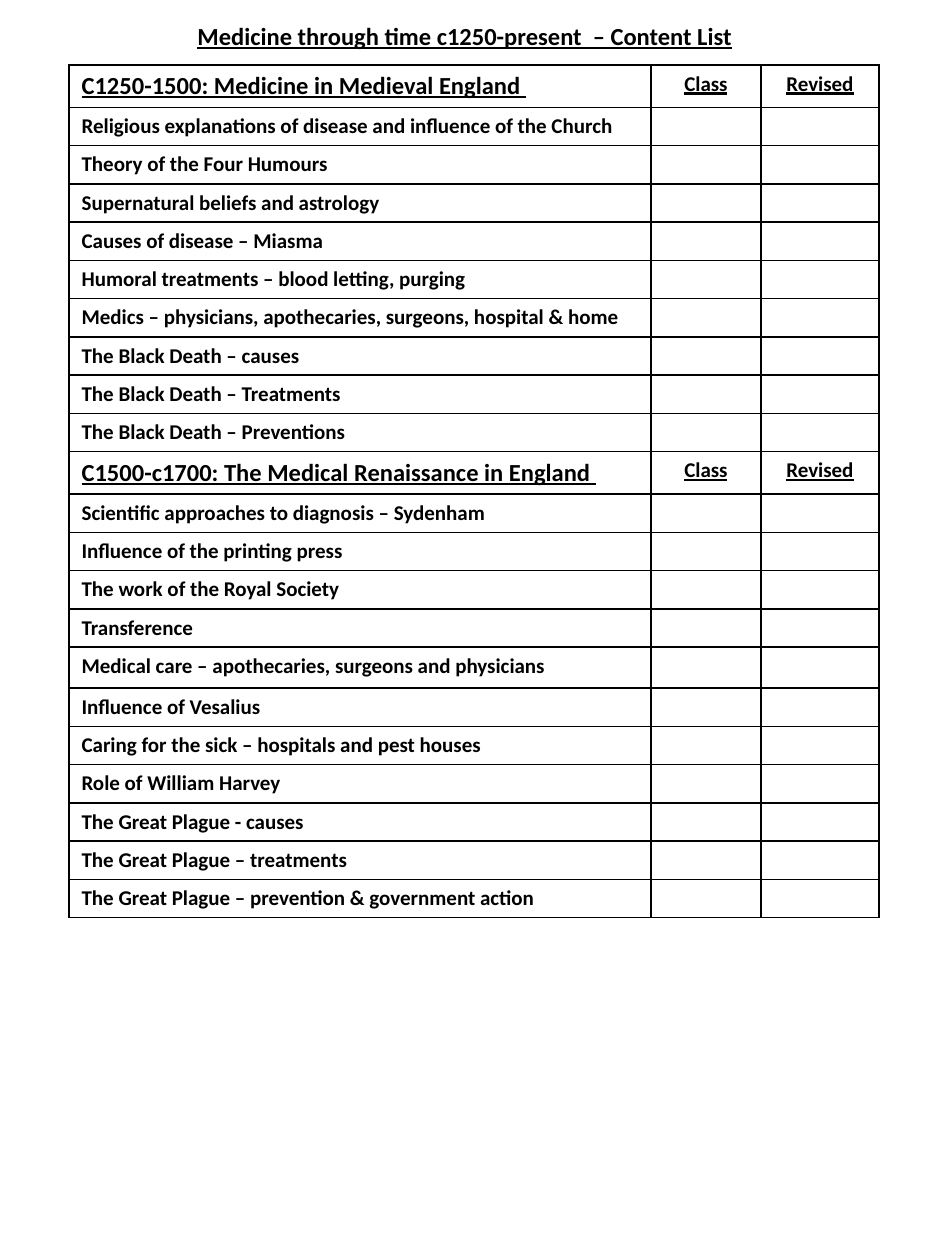
from dataclasses import dataclass

from lxml import etree
from pptx import Presentation
from pptx.dml.color import RGBColor
from pptx.enum.text import MSO_ANCHOR, MSO_AUTO_SIZE, PP_ALIGN
from pptx.oxml.ns import qn
from pptx.util import Emu, Pt

PIXELS_PER_INCH = 126
BLACK = RGBColor(0, 0, 0)
FONT = "Calibri"
HEADING_SIZE, BODY_SIZE = 14, 12
LEFT, CENTER = PP_ALIGN.LEFT, PP_ALIGN.CENTER
MIDDLE = MSO_ANCHOR.MIDDLE
NO_AUTOFIT = MSO_AUTO_SIZE.NONE
COLUMN_WIDTHS = (582, 110, 118)
HEADING_HEIGHT, TOPIC_HEIGHT, TALL_HEIGHT = 42, 38, 41
TALL_TOPIC = "Medical care – apothecaries, surgeons and physicians"


@dataclass(frozen=True)
class Period:
    heading: str
    topics: tuple[str, ...]


@dataclass(frozen=True)
class Row:
    texts: tuple[str, ...]
    height: int
    is_heading: bool = False


PERIODS = (
    Period("C1250-1500: Medicine in Medieval England ", (
        "Religious explanations of disease and influence of the Church",
        "Theory of the Four Humours",
        "Supernatural beliefs and astrology",
        "Causes of disease – Miasma",
        "Humoral treatments – blood letting, purging",
        "Medics – physicians, apothecaries, surgeons, hospital & home",
        "The Black Death – causes",
        "The Black Death – Treatments",
        "The Black Death – Preventions",
    )),
    Period("C1500-c1700: The Medical Renaissance in England ", (
        "Scientific approaches to diagnosis – Sydenham",
        "Influence of the printing press",
        "The work of the Royal Society",
        "Transference",
        TALL_TOPIC,
        "Influence of Vesalius",
        "Caring for the sick – hospitals and pest houses",
        "Role of William Harvey",
        "The Great Plague - causes",
        "The Great Plague – treatments",
        "The Great Plague – prevention & government action",
    )),
)


def px(length: int) -> Emu:
    return Emu(round(length * 914400 / PIXELS_PER_INCH))


def write(paragraph, text: str, size: int, underline: bool, alignment) -> None:
    paragraph.alignment = alignment
    font = paragraph.font
    font.name, font.size = FONT, Pt(size)
    font.bold, font.underline = True, underline
    font.color.rgb = BLACK
    if text:
        paragraph.add_run().text = text
    else:
        # An empty cell takes its line height from the end-of-paragraph mark.
        paragraph._p.get_or_add_endParaRPr().set("sz", str(size * 100))


def set_borders(cell) -> None:
    properties = cell._tc.get_or_add_tcPr()
    for position, side in enumerate(("a:lnL", "a:lnR", "a:lnT", "a:lnB")):
        line = etree.Element(qn(side), w=str(Pt(1)))
        fill = etree.SubElement(line, qn("a:solidFill"))
        etree.SubElement(fill, qn("a:srgbClr"), val=str(BLACK))
        properties.insert(position, line)


def list_rows() -> list[Row]:
    rows = []
    for period in PERIODS:
        rows.append(Row((period.heading, "Class", "Revised"), HEADING_HEIGHT, True))
        for topic in period.topics:
            height = TALL_HEIGHT if topic == TALL_TOPIC else TOPIC_HEIGHT
            rows.append(Row((topic, "", ""), height))
    return rows


def add_title(slide) -> None:
    title = slide.shapes.title
    title.left, title.top, title.width, title.height = map(px, (183, 14, 564, 43))
    frame = title.text_frame
    frame.auto_size = NO_AUTOFIT
    frame.word_wrap = False
    frame.vertical_anchor = MIDDLE
    write(frame.paragraphs[0], "Medicine through time c1250-present  – Content List",
          HEADING_SIZE, True, CENTER)


def add_content_table(slide) -> None:
    rows = list_rows()
    frame = slide.shapes.add_table(
        len(rows), len(COLUMN_WIDTHS), px(69), px(65),
        px(sum(COLUMN_WIDTHS)), px(sum(row.height for row in rows)))
    table = frame.table
    table.first_row = table.horz_banding = False
    for column, width in zip(table.columns, COLUMN_WIDTHS):
        column.width = px(width)
    for table_row, row in zip(table.rows, rows):
        table_row.height = px(row.height)
        for index, (cell, text) in enumerate(zip(table_row.cells, row.texts)):
            is_first = index == 0
            size = HEADING_SIZE if row.is_heading and is_first else BODY_SIZE
            cell.fill.background()
            set_borders(cell)
            write(cell.text_frame.paragraphs[0], text, size, row.is_heading,
                  LEFT if is_first else CENTER)


def main() -> None:
    presentation = Presentation()
    presentation.slide_width, presentation.slide_height = px(945), px(1260)
    slide = presentation.slides.add_slide(presentation.slide_layouts[5])
    add_title(slide)
    add_content_table(slide)
    presentation.save("out.pptx")


if __name__ == "__main__":
    main()
